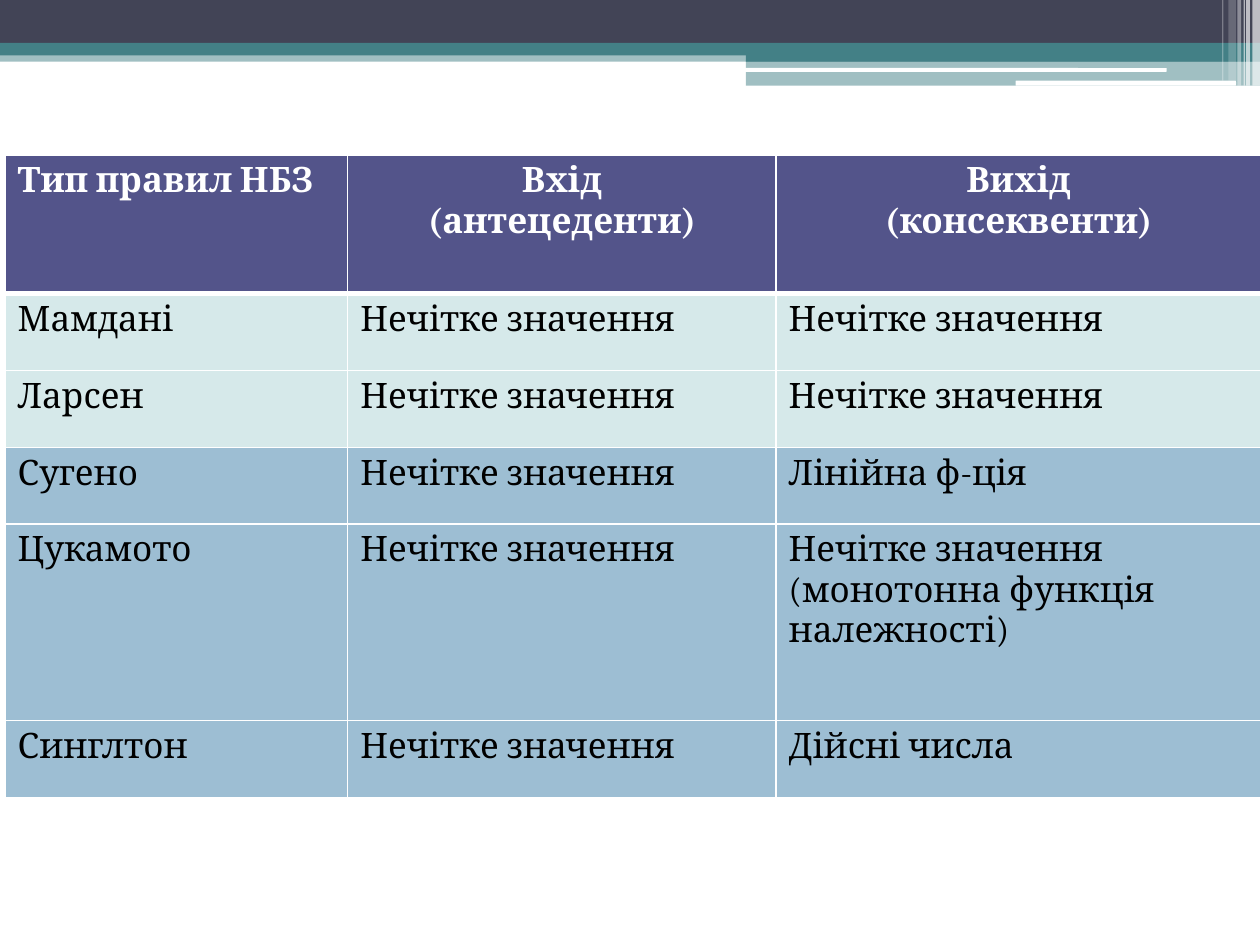
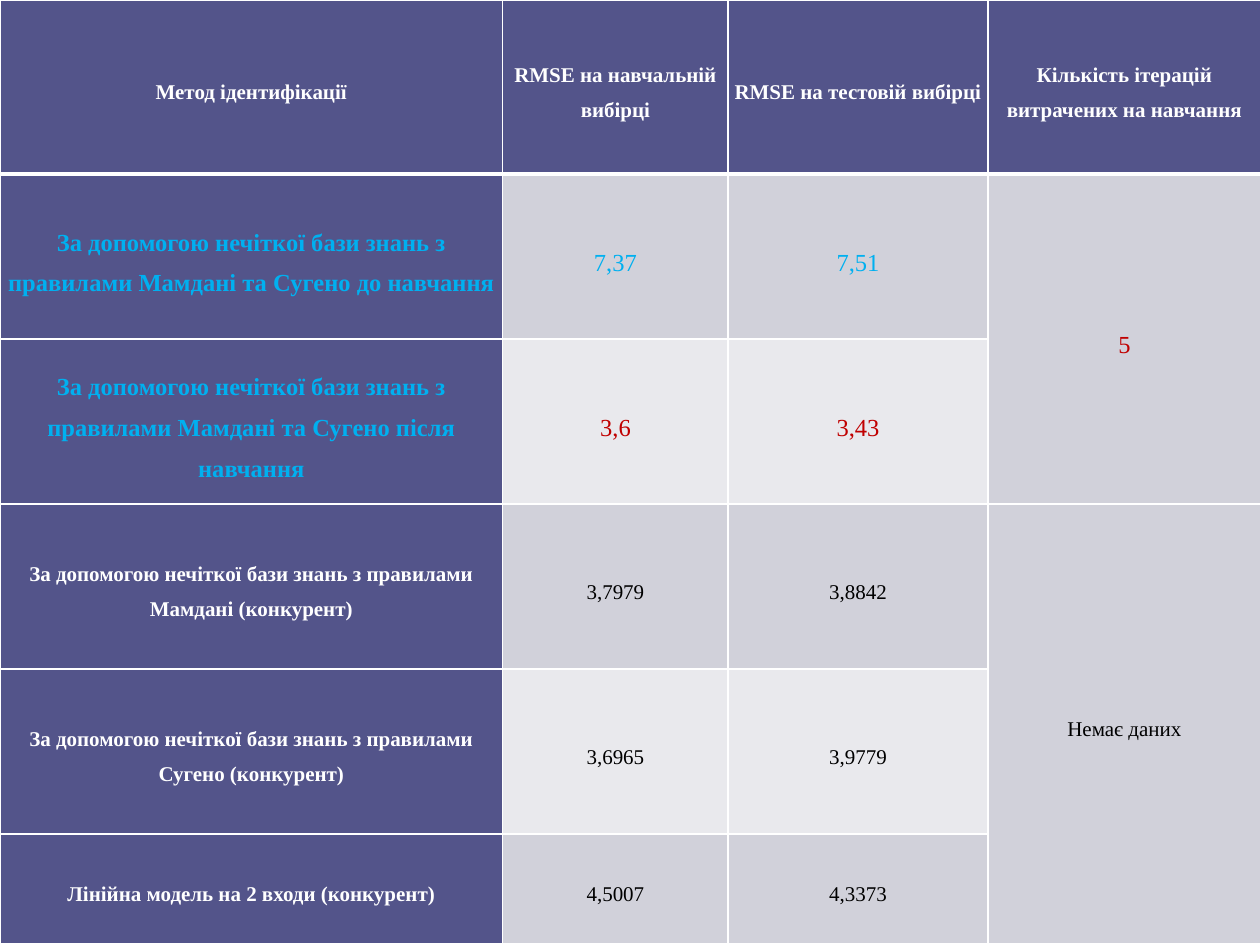
from lxml import etree
from pptx import Presentation
from pptx.dml.color import RGBColor
from pptx.enum import shapes, text
from pptx.oxml import ns
from pptx.util import Inches, Pt

COLORS = {
    "white": "FFFFFF", "black": "000000", "slate": "424456", "teal": "438086",
    "indigo": "53548A", "mint": "D6E9EA", "steel": "9DBED3",
    "gray": "D1D1DA", "pale": "E9E9ED", "sky": "00B0F0", "red": "C00000",
}
RECT = shapes.MSO_SHAPE.RECTANGLE
ROUND = shapes.MSO_SHAPE.ROUNDED_RECTANGLE
BANDS = [
    (RECT, 0, 0.4, 10, 0.09, "teal", 50),
    (RECT, 0, 0, 10, 0.34, "slate", 100),
    (RECT, 0, 0.34, 10, 0.1, "teal", 100),
    (RECT, 5.92, 0.39, 4.08, 0.1, "teal", 100),
    (RECT, 5.92, 0.48, 4.08, 0.2, "teal", 50),
    (ROUND, 5.91, 0.54, 3.35, 0.03, "white", 100),
    (ROUND, 8.06, 0.64, 1.75, 0.04, "white", 100),
]
STRIPES = [
    (9.94, 0.06, 0.68, 65), (9.89, 0.03, 0.68, 65), (9.87, 0.01, 0.68, 60),
    (9.82, 0.03, 0.68, 40), (9.75, 0.06, 0.64, 20), (9.7, 0.01, 0.64, 30),
]
FUZZY = "Нечітке значення"
RULE_ROWS = [
    ("Тип правил НБЗ", "Вхід\n(антецеденти)", "Вихід\n(консеквенти)"),
    ("Мамдані", FUZZY, FUZZY),
    ("Ларсен", FUZZY, FUZZY),
    ("Сугено", FUZZY, "Лінійна ф-ція"),
    ("Цукамото", FUZZY, FUZZY + " (монотонна функція належності)"),
    ("Синглтон", FUZZY, "Дійсні числа"),
]
METHOD = "За допомогою нечіткої бази знань з правилами "
ERROR_ROWS = [
    ("Метод ідентифікації", "RMSE на навчальній вибірці",
     "RMSE на тестовій вибірці", "Кількість ітерацій витрачених на навчання"),
    (METHOD + "Мамдані та Сугено до навчання", "7,37", "7,51", "5"),
    (METHOD + "Мамдані та Сугено після навчання", "3,6", "3,43", ""),
    (METHOD + "Мамдані (конкурент)", "3,7979", "3,8842", "Немає даних"),
    (METHOD + "Сугено (конкурент)", "3,6965", "3,9779", ""),
    ("Лінійна модель на 2 входи (конкурент)", "4,5007", "4,3373", ""),
]


def rgb(color):
    return RGBColor.from_string(COLORS[color])


def set_all(target, values):
    for name, value in values.items():
        setattr(target, name, value)


def add_band(page, kind, left, top, width, height, color, opacity):
    band = page.shapes.add_shape(
        kind, Inches(left), Inches(top), Inches(width), Inches(height))
    band.shadow.inherit = False
    band.line.fill.background()
    band.fill.solid()
    band.fill.fore_color.rgb = rgb(color)
    if opacity < 100:
        tint = band.fill._xPr.find(ns.qn("a:solidFill"))[0]
        etree.SubElement(tint, ns.qn("a:alpha"), val=str(opacity * 1000))


def add_page(deck):
    page = deck.slides.add_slide(deck.slide_layouts[6])
    for band in BANDS:
        add_band(page, *band)
    for left, width, height, opacity in STRIPES:
        add_band(page, RECT, left, 0, width, height, "white", opacity)
    return page


def set_borders(cell, widths):
    properties = cell._tc.get_or_add_tcPr()
    for side, width in widths.items():
        line = etree.SubElement(properties, ns.qn(f"a:ln{side}"), w=str(Pt(width)))
        fill = etree.SubElement(line, ns.qn("a:solidFill"))
        etree.SubElement(fill, ns.qn("a:srgbClr"), val=COLORS["white"])


def fill_cell(cell, words, fill, color, cell_format, para_format, font_format):
    cell.fill.solid()
    cell.fill.fore_color.rgb = rgb(fill)
    set_all(cell, cell_format)
    if not words:
        return
    cell.text = words
    for para in cell.text_frame.paragraphs:
        set_all(para, para_format)
        for span in para.runs:
            set_all(span.font, font_format)
            span.font.color.rgb = rgb(color)


def add_table(page, left, top, widths, heights, rows, style, merges=()):
    table = page.shapes.add_table(
        len(rows), len(widths), Inches(left), Inches(top),
        Inches(sum(widths)), Inches(sum(heights))).table
    set_all(table, {"first_row": False, "horz_banding": False})
    for column, width in zip(table.columns, widths):
        column.width = Inches(width)
    for row, height in zip(table.rows, heights):
        row.height = Inches(height)
    for column, first, last in merges:
        table.cell(first, column).merge(table.cell(last, column))
    for r, row in enumerate(rows):
        for c, words in enumerate(row):
            cell = table.cell(r, c)
            set_borders(cell, {"L": 1, "R": 1, "T": 3 if r == 1 else 1,
                               "B": 3 if r == 0 else 1})
            fill_cell(cell, words, *style(r, c))


def rule_style(row, column):
    header = row == 0
    fill = "indigo" if header else "mint" if row < 3 else "steel"
    align = text.PP_ALIGN.CENTER if header and column else text.PP_ALIGN.LEFT
    font = {"name": "Cambria", "size": Pt(20), "bold": header}
    return fill, "white" if header else "black", {}, {"alignment": align}, font


def error_style(row, column):
    heading = row == 0 or column == 0
    ours = row in (1, 2)
    if heading:
        fill = "indigo"
        color = "sky" if ours else "white"
    else:
        fill = "gray" if row % 2 or column == 3 else "pale"
        color = "black"
        if ours:
            color = "sky" if row == 1 and column < 3 else "red"
    margins = {f"margin_{side}": 0 for side in ("left", "right", "top", "bottom")}
    cell = {"vertical_anchor": text.MSO_ANCHOR.MIDDLE, **margins}
    para = {"alignment": text.PP_ALIGN.CENTER, "line_spacing": 1.5}
    font = {"name": "Times New Roman", "size": Pt(14 if ours else 12), "bold": heading}
    return fill, color, cell, para, font


def main():
    deck = Presentation()
    set_all(deck, {"slide_width": Inches(10), "slide_height": Inches(7.5)})
    add_table(add_page(deck), 0.04, 1.23, [2.72, 3.4, 3.85],
              [1.1, 0.61, 0.61, 0.61, 1.56, 0.61], RULE_ROWS, rule_style)
    add_table(add_page(deck), 0, 0, [3.99, 1.79, 2.06, 2.17],
              [1.38] + [1.31] * 4 + [0.87], ERROR_ROWS, error_style,
              merges=[(3, 1, 2), (3, 3, 5)])
    deck.save("out.pptx")


if __name__ == "__main__":
    main()
